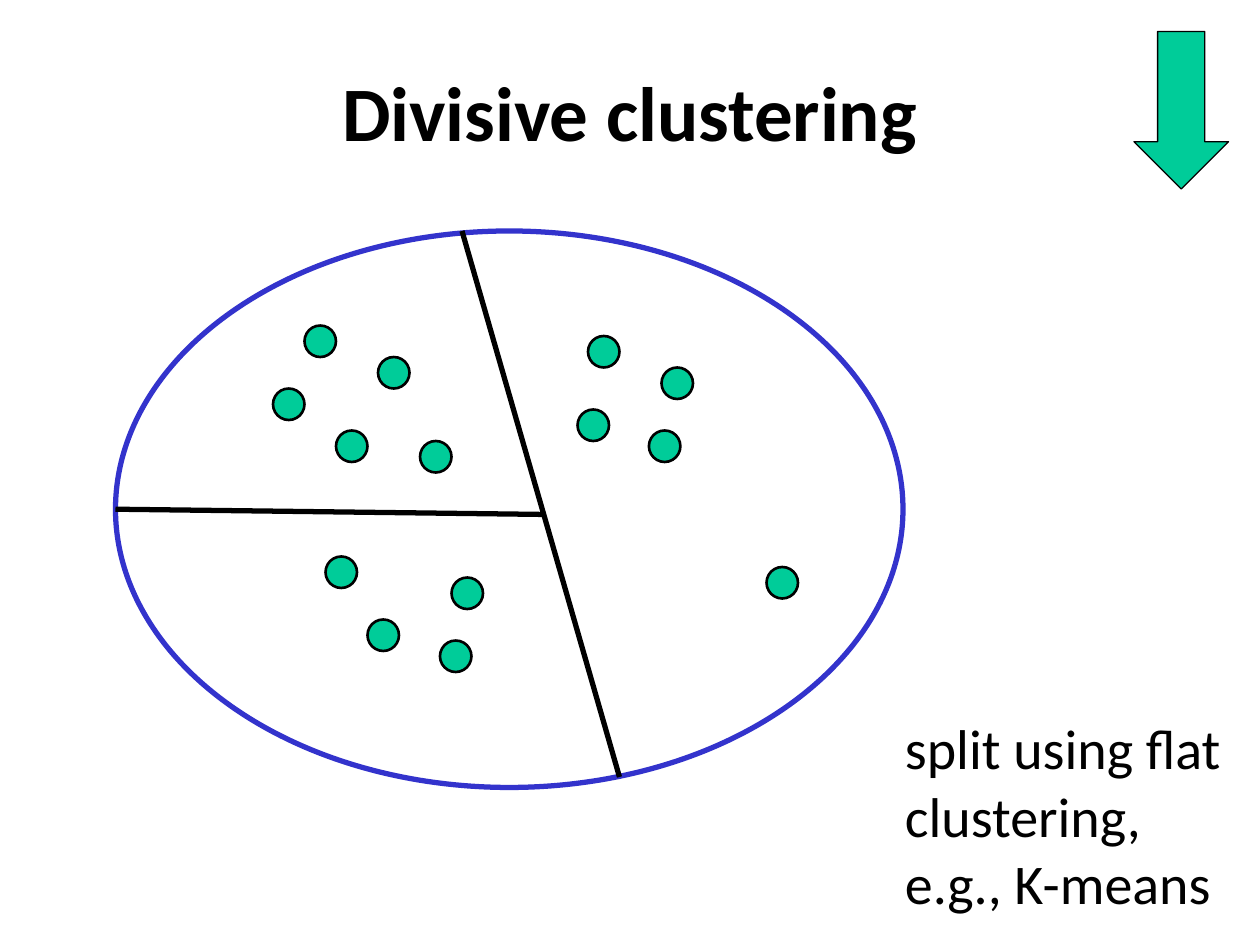
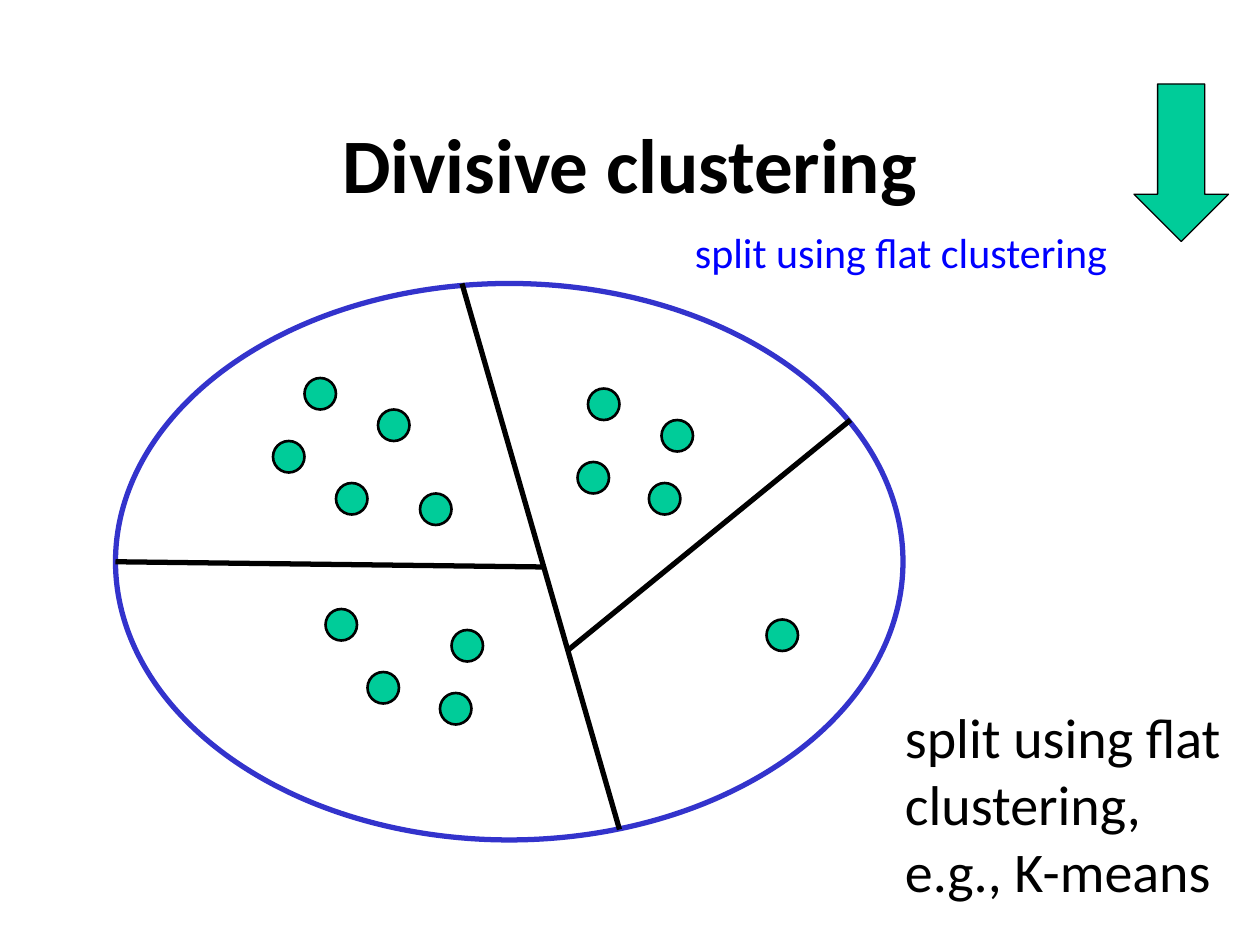
from pptx import Presentation, util as u
from pptx.dml.color import RGBColor
from pptx.enum import shapes, text
from pptx.oxml import ns, xmlchemy

PX = 7620  # EMU per px, 120 px to the inch
DOT_SIZE = 30

# Positions on the first page; the second page moves them all down together.
DOTS = [
    (290, 310), (260, 370), (320, 410), (360, 340), (400, 420),
    (550, 390), (560, 320), (630, 350), (618, 410), (730, 540),
    (350, 590), (310, 530), (430, 550), (419, 610),
]
FIRST_SPLITS = [(440, 220, 590, 740), (110, 485, 520, 490)]
LAST_SPLIT = (540, 570, 810, 350)


def colour(value):
    return RGBColor.from_string(value)


def px(*lengths):
    return [u.Emu(length * PX) for length in lengths]


class Painter:
    """Holds the shared style, the current page and its vertical shift."""

    font = "Calibri"
    ink = "000000"
    dot_fill = "00CC99"
    outline = "3333CC"
    note = "0000FF"

    def __init__(self):
        self.deck = Presentation()
        self.deck.slide_width, self.deck.slide_height = px(1200, 900)

    def new_page(self, shift):
        self.page = self.deck.slides.add_slide(self.deck.slide_layouts[6])
        self.shift = shift

    def shape(self, kind, left, top, width, height, line, weight, fill=None):
        shape = self.page.shapes.add_shape(
            kind, *px(left, top + self.shift, width, height))
        shape.shadow.inherit = False
        if fill:
            shape.fill.solid()
            shape.fill.fore_color.rgb = colour(fill)
        else:
            shape.fill.background()
        shape.line.color.rgb = colour(line)
        shape.line.width = u.Pt(weight)

    def line(self, x1, y1, x2, y2):
        line = self.page.shapes.add_connector(
            shapes.MSO_CONNECTOR.STRAIGHT,
            *px(x1, y1 + self.shift, x2, y2 + self.shift))
        line.line.color.rgb = colour(self.ink)
        line.line.width = u.Pt(3)
        line._element.spPr.append(xmlchemy.OxmlElement("a:effectLst"))

    def text(self, words, left, top, width, height, size, ink=None,
             bold=False, centred=False, wrap=True):
        box = self.page.shapes.add_textbox(*px(left, top, width, height))
        frame = box.text_frame
        frame.word_wrap = wrap
        para = frame.paragraphs[0]
        if centred:
            frame.vertical_anchor = text.MSO_ANCHOR.MIDDLE
            para.alignment = text.PP_ALIGN.CENTER
        span = para.add_run()
        span.text = words
        span.font.name = self.font
        span.font.size = u.Pt(size)
        span.font.bold = bold
        span.font.color.rgb = colour(ink or self.ink)

    def title(self, words):
        self.text(words, 90, 30 + self.shift, 1020, 150, 44,
                  bold=True, centred=True)

    def dot(self, left, top):
        self.shape(shapes.MSO_SHAPE.OVAL, left, top, DOT_SIZE, DOT_SIZE,
                   self.ink, 1.5, self.dot_fill)

    def cluster_outline(self):
        self.shape(shapes.MSO_SHAPE.OVAL, 110, 220, 750, 530, self.outline, 3)

    def down_arrow(self):
        self.shape(shapes.MSO_SHAPE.DOWN_ARROW, 1080, 30, 90, 150,
                   self.ink, 0.75, self.dot_fill)


def draw_clustering(painter, shift, splits, caption_top):
    painter.new_page(shift)
    painter.title("Divisive clustering")
    for dot in DOTS:
        painter.dot(*dot)
    painter.cluster_outline()
    for split in splits:
        painter.line(*split)
    painter.text("split using flat clustering, e.g., K-means",
                 850, caption_top, 340, 206, 32)
    painter.down_arrow()


def main():
    painter = Painter()
    draw_clustering(painter, 0, FIRST_SPLITS, 674)
    draw_clustering(painter, 50, FIRST_SPLITS + [LAST_SPLIT], 663)
    painter.text("split using flat clustering", 650, 210, 422, 60, 24,
                 ink=painter.note, wrap=False)
    painter.deck.save("out.pptx")


if __name__ == "__main__":
    main()
